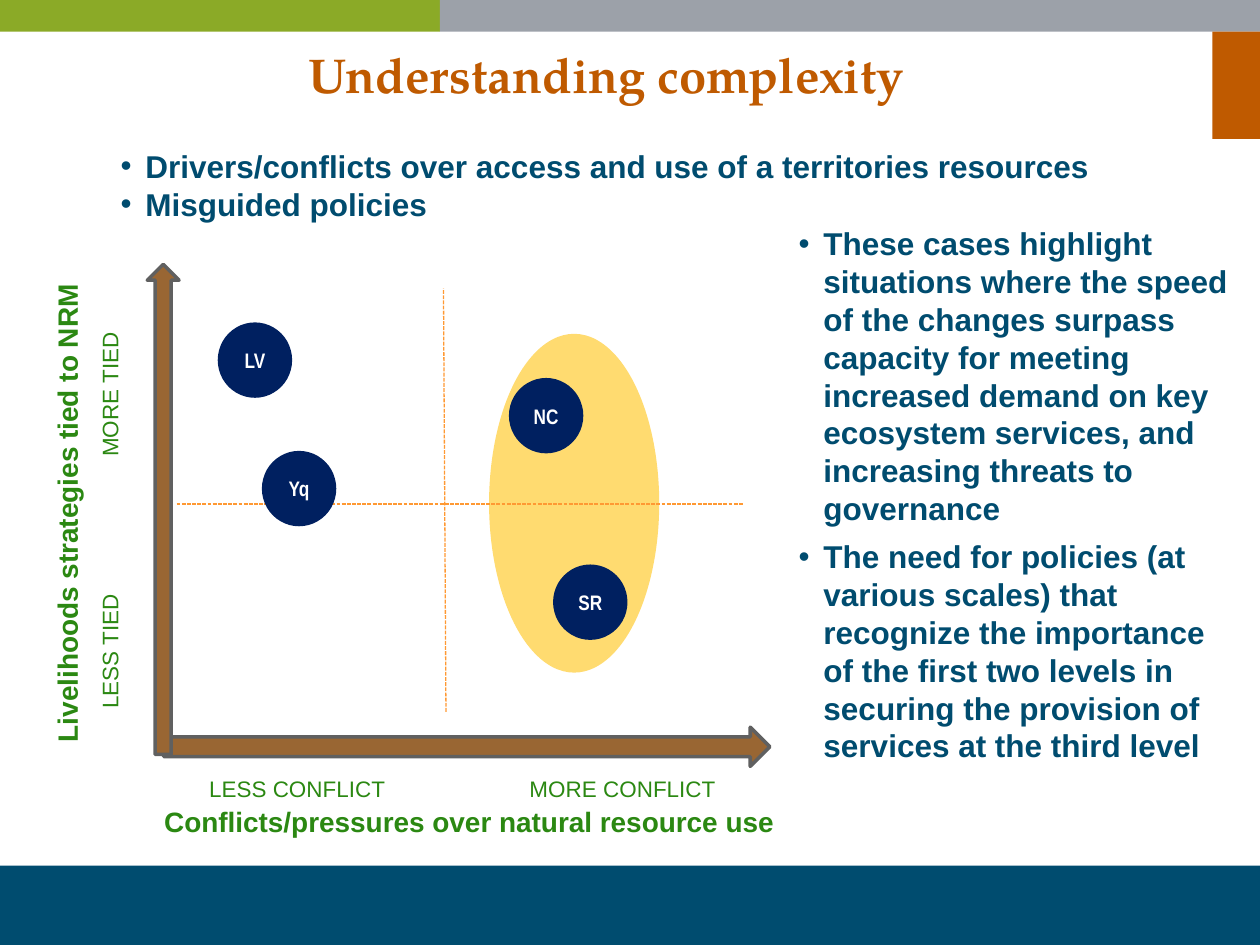
from pptx import Presentation, util as u
from pptx.dml.color import RGBColor
from pptx.enum import dml, shapes, text
from pptx.oxml.ns import qn
from lxml import etree

Cm, Pt = u.Cm, u.Pt
KIND = shapes.MSO_SHAPE
NAVY, RUST, GREEN, GOLD = "004C6F", "BF5A00", "2B8812", "FF9933"


def paint(fmt, color):
    """Give a fill, or a font's fill, a solid colour."""
    fmt.solid()
    fmt.fore_color.rgb = RGBColor.from_string(color)


def write(frame, lines, size=16, font="Arial", color=GREEN, bold=True,
          align="CENTER", anchor="MIDDLE", inset=0, wrap=True, caps=False,
          turn=False, before=0, lead=None, hang=0):
    frame.auto_size = text.MSO_AUTO_SIZE.NONE
    frame.word_wrap = wrap
    frame.vertical_anchor = getattr(text.MSO_ANCHOR, anchor)
    frame.margin_left = frame.margin_right = Cm(inset)
    frame.margin_top = frame.margin_bottom = Cm(inset / 2)
    if turn:
        frame._txBody.bodyPr.set("vert", "vert270")
    for i, line in enumerate(lines):
        para = frame.add_paragraph() if i else frame.paragraphs[0]
        para.alignment = getattr(text.PP_ALIGN, align)
        para.space_before = Pt(before)
        if lead:
            para.line_spacing = Pt(lead)
        if hang:
            props = para._p.get_or_add_pPr()
            props.set("marL", str(Cm(hang)))
            props.set("indent", str(-Cm(hang)))
        run = para.add_run()
        run.text = line
        run.font.name, run.font.size, run.font.bold = font, Pt(size), bold
        paint(run.font.fill, color)
        if caps:
            run.font._element.set("cap", "small")


def place(part, box):
    part.left, part.top, part.width, part.height = map(Cm, box)
    return part


def draw(slide, kind, box, fill, edge=None, alpha=None):
    part = slide.shapes.add_shape(kind, *map(Cm, box))
    part.shadow.inherit = False
    paint(part.fill, fill)
    if alpha:
        tint = part.fill._xPr.find(qn("a:solidFill"))[0]
        etree.SubElement(tint, qn("a:alpha")).set("val", str(alpha * 1000))
    if edge:
        paint(part.line.fill, edge)
        part.line.width = Pt(2)
    else:
        part.line.fill.background()
    return part


def dash(slide, *ends):
    line = slide.shapes.add_connector(shapes.MSO_CONNECTOR.STRAIGHT,
                                      *map(Cm, ends))
    paint(line.line.fill, GOLD)
    line.line.width = Pt(0.75)
    line.line.dash_style = dml.MSO_LINE.SQUARE_DOT
    etree.SubElement(line._element.spPr, qn("a:effectLst"))


def label(slide, box, words, **form):
    part = slide.shapes.add_textbox(*map(Cm, box))
    write(part.text_frame, [words], wrap=False, **form)


def frame(slide, wide, high):
    """Colour bands around the slide."""
    split, band, foot = 8.87, 0.64, 1.6
    for box, fill in [((0, 0, split, band), "8BAA27"),
                      ((split, 0, wide - split, band), "9CA1A9"),
                      ((wide - 0.96, band, 0.96, 2.16), RUST),
                      ((0, high - foot, wide, foot), NAVY)]:
        draw(slide, KIND.RECTANGLE, box, fill)


def head(part, box):
    write(place(part, box).text_frame, ["Understanding complexity"], size=28,
          font="TeX Gyre Pagella", color=RUST, inset=0.25)


def points(part, box, lines, before=0):
    write(place(part, box).text_frame, lines, size=18, color=NAVY,
          align="LEFT", anchor="TOP", inset=0.25, before=before, lead=21.6,
          hang=0.5)


def matrix(slide, x, y):
    """Conflict against livelihoods, from the top left corner x, y."""
    # Highlighted area and quadrant lines
    draw(slide, KIND.OVAL, (x + 8.86, y + 1.73, 3.43, 6.83), "FFC000",
         alpha=56)
    dash(slide, x + 2.56, y + 5.16, x + 13.99, y + 5.16)
    dash(slide, x + 7.99, y + 9.35, x + 7.94, y + 0.82)

    # Axes
    for kind, box in [(KIND.RIGHT_ARROW, (x + 2.3, y + 9.66, 12.22, 0.79)),
                      (KIND.UP_ARROW, (x + 1.97, y + 0.33, 0.64, 9.88))]:
        draw(slide, kind, box, "996633", "606060")

    # Axis titles
    label(slide, (x, y + 0.03, 0.69, 10.64),
          "Livelihoods strategies tied to NRM", turn=True)
    label(slide, (x + 1.41, y + 11.08, 14.1, 0.97),
          "Conflicts/pressures over natural resource use")

    # Axis ends, centred on each half
    size = 5
    for words, mid in [("less tied", 8.13), ("more tied", 2.95)]:
        label(slide, (x + 0.65, y + mid - size / 2, 1.02, size), words,
              bold=False, caps=True, turn=True)
    for words, mid in [("less conflict", 4.99), ("more conflict", 11.55)]:
        label(slide, (x + mid - size / 2, y + 10.54, size, 0.64), words,
              bold=False, caps=True)

    # Cases
    for name, dx, dy in [("NC", 9.26, 2.62), ("Yq", 4.28, 4.09),
                         ("LV", 3.39, 1.5), ("SR", 10.15, 6.38)]:
        dot = draw(slide, KIND.OVAL, (x + dx, y + dy, 1.5, 1.52), "002060")
        write(dot.text_frame, [name], size=12, font="Arial Narrow",
              color="FFFFFF", wrap=False)


def main():
    deck = Presentation()
    wide, high = 25.4, 19.05
    deck.slide_width, deck.slide_height = Cm(wide), Cm(high)
    slide = deck.slides.add_slide(deck.slide_layouts[3])
    title, top, side = slide.placeholders

    frame(slide, wide, high)
    head(title, (0, 0.76, 24.44, 1.45))
    points(top, (2.18, 2.84, 21.62, 1.8),
           ["Drivers/conflicts over access and use of a territories resources",
            "Misguided policies"])
    matrix(slide, 1, 5)
    points(side, (15.85, 4.4, 9.17, 12.22),
           ["These cases highlight situations where the speed of the changes "
            "surpass capacity for meeting increased demand on key ecosystem "
            "services, and increasing threats to governance",
            "The need for policies (at various scales) that recognize the "
            "importance of the first two levels in securing the provision of "
            "services at the third level"], before=6)
    deck.save("out.pptx")


if __name__ == "__main__":
    main()
